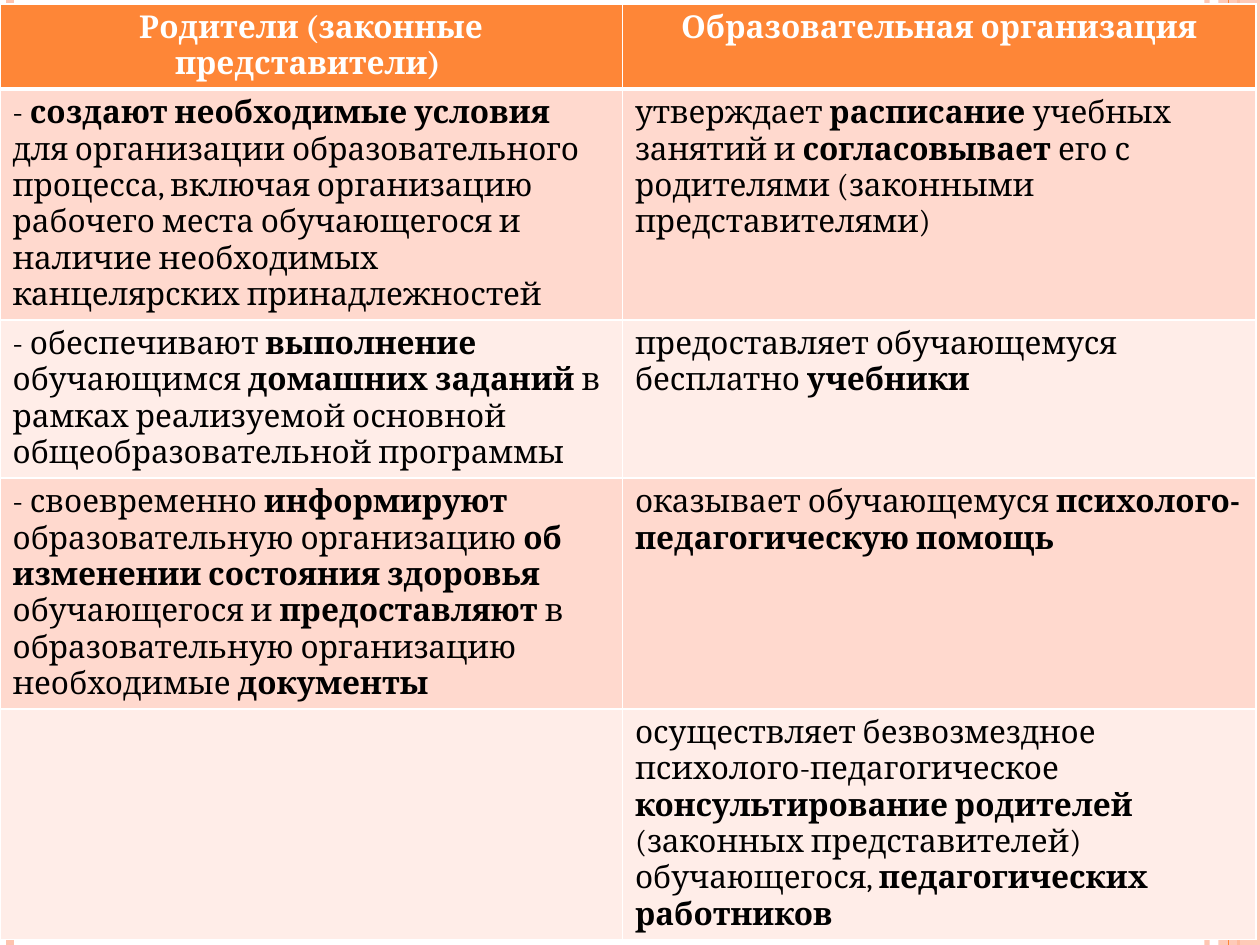
from dataclasses import dataclass

from lxml import etree
from pptx import Presentation
from pptx.dml.color import RGBColor
from pptx.enum.shapes import MSO_CONNECTOR, MSO_SHAPE
from pptx.enum.text import PP_ALIGN
from pptx.oxml.ns import qn
from pptx.util import Inches, Pt

STRAIGHT = MSO_CONNECTOR.STRAIGHT
RECTANGLE = MSO_SHAPE.RECTANGLE
LEFT, CENTER = PP_ALIGN.LEFT, PP_ALIGN.CENTER


@dataclass(frozen=True)
class Theme:
    font: str = "Cambria"
    size: int = 18
    accent: str = "FE8637"
    pale: str = "FEC3AE"
    bands: tuple = ("FFD9CE", "FFEDE8")
    white: str = "FFFFFF"
    black: str = "000000"


def set_alpha(color_parent, percent):
    color = next(color_parent.iter(qn("a:srgbClr")))
    etree.SubElement(color, qn("a:alpha"), val=str(percent * 1000))


def write_text(tf, text, *, font, size, color, align=LEFT, bold=False):
    p = tf.paragraphs[0]
    p.alignment = align
    p.font.size = Pt(size)
    for i, part in enumerate(text.split("**")):
        if part:
            r = p.add_run()
            r.text = part
            r.font.name = font
            r.font.size = Pt(size)
            r.font.bold = bold or i % 2 == 1
            r.font.color.rgb = RGBColor.from_string(color)


class SlideBuilder:
    def __init__(self, prs, theme):
        self.theme = theme
        self.height = prs.slide_height
        self.s = prs.slides.add_slide(prs.slide_layouts[6])

    def vertical_line(self, x, color, width, alpha=100):
        line = self.s.shapes.add_connector(STRAIGHT, Inches(x), 0, Inches(x), self.height)
        line.line.color.rgb = RGBColor.from_string(color)
        line.line.width = Pt(width)
        if alpha < 100:
            set_alpha(line.line._ln, alpha)
        etree.SubElement(line._element.spPr, qn("a:effectLst"))

    def vertical_band(self, x, width, color, alpha):
        sp = self.s.shapes.add_shape(RECTANGLE, Inches(x), 0, Inches(width), self.height)
        sp.shadow.inherit = False
        sp.fill.solid()
        sp.fill.fore_color.rgb = RGBColor.from_string(color)
        set_alpha(sp._element.spPr, alpha)
        sp.line.fill.background()

    def cell_borders(self, cell, top, bottom):
        tc_pr = cell._tc.get_or_add_tcPr()
        for side, width in (("L", 1), ("R", 1), ("T", top), ("B", bottom)):
            ln = etree.SubElement(tc_pr, qn(f"a:ln{side}"), w=str(Pt(width)))
            fill = etree.SubElement(ln, qn("a:solidFill"))
            etree.SubElement(fill, qn("a:srgbClr"), val=self.theme.white)

    def table(self, x, y, col_widths, row_heights, rows):
        t = self.theme
        table = self.s.shapes.add_table(
            len(rows), len(col_widths), Inches(x), Inches(y),
            Inches(sum(col_widths)), Inches(sum(row_heights)),
        ).table
        table.horz_banding = False
        for col, width in zip(table.columns, col_widths):
            col.width = Inches(width)
        for i, (row, height, texts) in enumerate(zip(table.rows, row_heights, rows)):
            row.height = Inches(height)
            header = i == 0
            fill = t.accent if header else t.bands[(i - 1) % 2]
            for cell, text in zip(row.cells, texts):
                self.cell_borders(cell, 3 if i == 1 else 1, 3 if header else 1)
                cell.fill.solid()
                cell.fill.fore_color.rgb = RGBColor.from_string(fill)
                write_text(
                    cell.text_frame, text, font=t.font, size=t.size,
                    color=t.white if header else t.black,
                    align=CENTER if header else LEFT, bold=header,
                )


ROWS = [
    ("Родители (законные представители) ", "Образовательная организация"),
    (
        "- **создают необходимые условия **для организации образовательного процесса, "
        "включая организацию рабочего места обучающегося и наличие необходимых "
        "канцелярских принадлежностей",
        "утверждает **расписание **учебных занятий и **согласовывает** его с "
        "родителями (законными представителями)",
    ),
    (
        "- обеспечивают **выполнение **обучающимся **домашних заданий **в рамках "
        "реализуемой основной общеобразовательной программы",
        "предоставляет обучающемуся бесплатно **учебники**",
    ),
    (
        "- своевременно **информируют **образовательную организацию **об изменении "
        "состояния здоровья **обучающегося и **предоставляют** в образовательную "
        "организацию необходимые **документы**",
        "оказывает обучающемуся **психолого-педагогическую помощь**",
    ),
    (
        "",
        "осуществляет безвозмездное психолого-педагогическое **консультирование "
        "родителей **(законных представителей) обучающегося, **педагогических работников**",
    ),
]


def main():
    prs = Presentation()
    prs.slide_width, prs.slide_height = Inches(10), Inches(7.5)
    theme = Theme()
    slide = SlideBuilder(prs, theme)
    slide.vertical_line(9.58, theme.pale, 3, alpha=93)
    slide.vertical_line(0.08, theme.pale, 4.5)
    slide.vertical_line(9.83, theme.accent, 1.5)
    slide.vertical_band(9.67, 0.33, theme.pale, alpha=87)
    slide.vertical_line(9.75, theme.accent, 0.75)
    slide.table(0, 0.03, (4.94, 5.03), (0.67, 1.83, 1.25, 1.83, 1.83), ROWS)
    prs.save("out.pptx")


if __name__ == "__main__":
    main()
